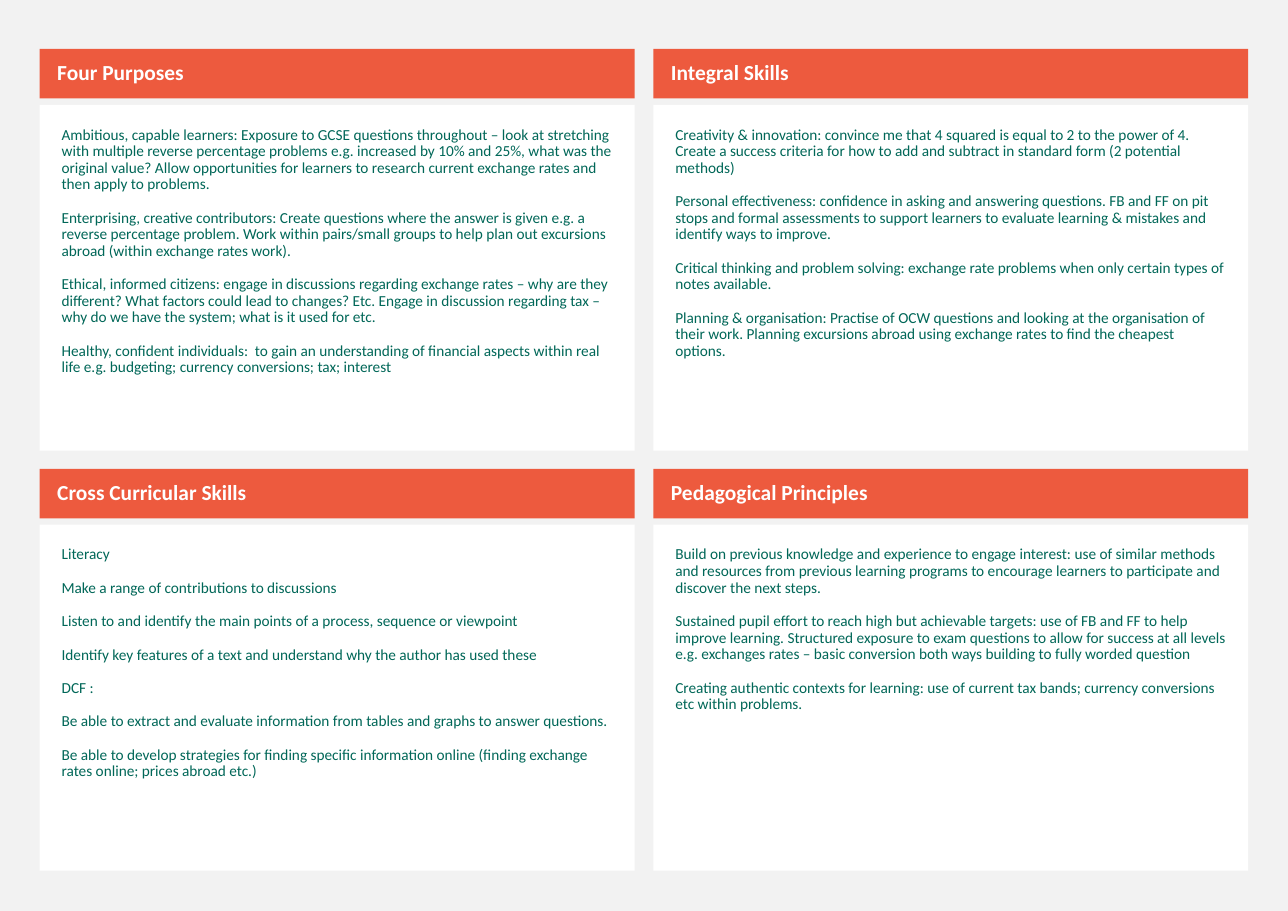
from pptx import Presentation
from pptx.dml.color import RGBColor
from pptx.enum.shapes import MSO_SHAPE
from pptx.enum.text import MSO_ANCHOR, PP_ALIGN
from pptx.util import Pt

HUES = {"back": "F2F2F2", "head": "ED5A3E", "card": "FFFFFF",
        "title": "FFFFFF", "text": "006758"}
FONT = "Calibri"
LEFT, TOP = 25.92, 31.9
STEP_X, STEP_Y = 401.04, 274.5
WIDTH, HEAD_H, CARD_H = 388.8, 32.4, 226.1
DROP = 36.6  # from the top of a heading to the top of its card

# Cards in reading order, two to a row
CARDS = [
    ("Four Purposes", [
        "Ambitious, capable learners: Exposure to GCSE questions throughout – look at "
        "stretching with multiple reverse percentage problems e.g. increased by 10% and 25%, "
        "what was the original value? Allow opportunities for learners to research current "
        "exchange rates and then apply to problems.",
        "Enterprising, creative contributors: Create questions where the answer is given e.g. "
        "a reverse percentage problem. Work within pairs/small groups to help plan out "
        "excursions abroad (within exchange rates work).",
        "Ethical, informed citizens: engage in discussions regarding exchange rates – why are "
        "they different? What factors could lead to changes? Etc. Engage in discussion "
        "regarding tax – why do we have the system; what is it used for etc.",
        "Healthy, confident individuals:  to gain an understanding of financial aspects within "
        "real life e.g. budgeting; currency conversions; tax; interest",
    ]),
    ("Integral Skills", [
        "Creativity & innovation: convince me that 4 squared is equal to 2 to the power of 4. "
        "Create a success criteria for how to add and subtract in standard form (2 potential "
        "methods)",
        "Personal effectiveness: confidence in asking and answering questions. FB and FF on pit "
        "stops and formal assessments to support learners to evaluate learning & mistakes and "
        "identify ways to improve.",
        "Critical thinking and problem solving: exchange rate problems when only certain types "
        "of notes available.",
        "Planning & organisation: Practise of OCW questions and looking at the organisation of "
        "their work. Planning excursions abroad using exchange rates to find the cheapest "
        "options.",
    ]),
    ("Cross Curricular Skills", [
        "Literacy",
        "Make a range of contributions to discussions",
        "Listen to and identify the main points of a process, sequence or viewpoint",
        "Identify key features of a text and understand why the author has used these",
        "DCF :",
        "Be able to extract and evaluate information from tables and graphs to answer questions.",
        "Be able to develop strategies for finding specific information online (finding "
        "exchange rates online; prices abroad etc.)",
    ]),
    ("Pedagogical Principles", [
        "Build on previous knowledge and experience to engage interest: use of similar methods "
        "and resources from previous learning programs to encourage learners to participate "
        "and discover the next steps.",
        "Sustained pupil effort to reach high but achievable targets: use of FB and FF to help "
        "improve learning. Structured exposure to exam questions to allow for success at all "
        "levels e.g. exchanges rates – basic conversion both ways building to fully worded "
        "question",
        "Creating authentic contexts for learning: use of current tax bands; currency "
        "conversions etc within problems.",
    ]),
]


def add_box(x, y, height, fill, insets, anchor):
    """Add a plain filled box and return its text frame."""
    box = slide.shapes.add_shape(
        MSO_SHAPE.RECTANGLE, Pt(x), Pt(y), Pt(WIDTH), Pt(height))
    box.shadow.inherit = False
    box.fill.solid()
    box.fill.fore_color.rgb = RGBColor.from_string(HUES[fill])
    box.line.fill.background()
    frame = box.text_frame
    frame.word_wrap = True
    frame.vertical_anchor = anchor
    frame.margin_left, frame.margin_top, frame.margin_right, frame.margin_bottom = map(Pt, insets)
    return frame


def add_text(frame, lines, size, hue, bold=False):
    for i, line in enumerate(lines):
        para = frame.add_paragraph() if i else frame.paragraphs[0]
        para.alignment = PP_ALIGN.LEFT
        para.line_spacing = 0.9
        para.space_before = Pt(11)
        run = para.add_run()
        run.text = line
        run.font.name = FONT
        run.font.size = Pt(size)
        run.font.bold = bold
        run.font.color.rgb = RGBColor.from_string(HUES[hue])


deck = Presentation()
deck.slide_width, deck.slide_height = Pt(841.68), Pt(595.44)
slide = deck.slides.add_slide(deck.slide_layouts[6])
slide.background.fill.solid()
slide.background.fill.fore_color.rgb = RGBColor.from_string(HUES["back"])

for i, (title, lines) in enumerate(CARDS):
    row, col = divmod(i, 2)
    x, y = LEFT + col * STEP_X, TOP + row * STEP_Y
    head = add_box(x, y, HEAD_H, "head", (11.5, 3.6, 7.2, 3.6), MSO_ANCHOR.MIDDLE)
    add_text(head, [title], 14, "title", bold=True)
    card = add_box(x, y + DROP, CARD_H, "card", (14.4,) * 4, MSO_ANCHOR.TOP)
    add_text(card, lines, 10, "text")

deck.save("out.pptx")
